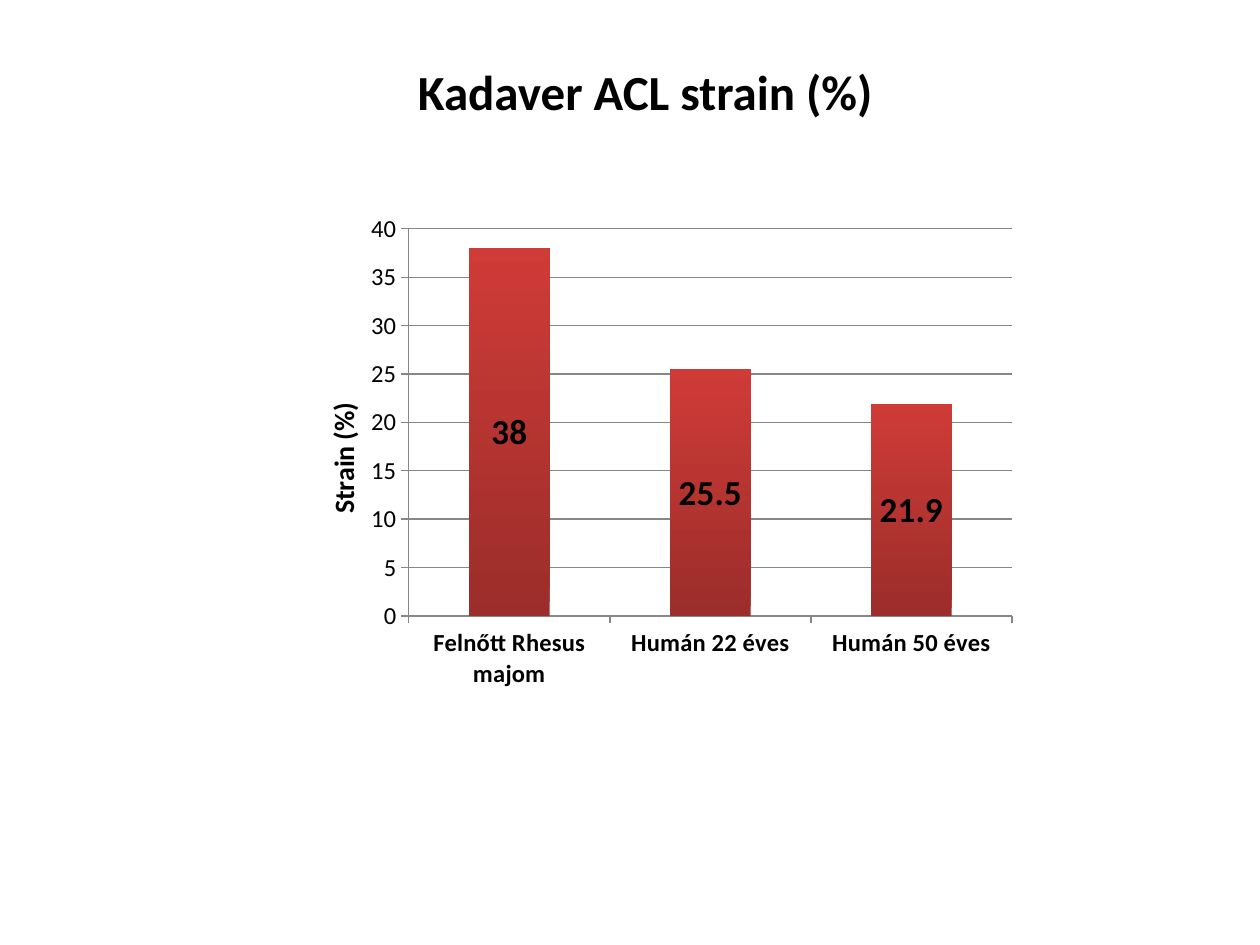
"""Build a slide with a column chart of cadaver ACL strain."""
from typing import NamedTuple

from lxml import etree
from pptx import Presentation
from pptx.chart.data import CategoryChartData
from pptx.dml.color import RGBColor
from pptx.enum import chart as ch, text
from pptx.oxml import ns
from pptx.util import Pt

BLACK = RGBColor(0, 0, 0)
GRAY = RGBColor(0x87, 0x87, 0x87)
DARK_RED = RGBColor(0x9B, 0x2D, 0x2A)
LIGHT_RED = RGBColor(0xCF, 0x3B, 0x37)
FONT = "Calibri"


class Strain(NamedTuple):
    subject: str
    percent: float


STRAINS = [
    Strain("Felnőtt Rhesus majom", 38),
    Strain("Humán 22 éves", 25.5),
    Strain("Humán 50 éves", 21.9),
]


def style(font, size: float, bold: bool = False) -> None:
    font.name, font.size, font.bold = FONT, Pt(size), bold
    font.color.rgb = BLACK


def draw_line(line) -> None:
    line.color.rgb = GRAY
    line.width = Pt(0.75)


def set_layout(parent, index: int, **settings) -> None:
    for old in parent.findall(ns.qn("c:layout")):
        parent.remove(old)
    layout = etree.Element(ns.qn("c:layout"))
    manual = etree.SubElement(layout, ns.qn("c:manualLayout"))
    for tag, value in settings.items():
        etree.SubElement(manual, ns.qn(f"c:{tag}")).set("val", str(value))
    parent.insert(index, layout)


def add_title(slide, wording: str) -> None:
    title = slide.shapes.title
    title.left, title.top, title.width, title.height = Pt(54), Pt(31.7), Pt(629.3), Pt(41)
    frame = title.text_frame
    frame.text = wording
    frame.auto_size = text.MSO_AUTO_SIZE.SHAPE_TO_FIT_TEXT
    frame.vertical_anchor = text.MSO_ANCHOR.TOP
    frame.paragraphs[0].alignment = text.PP_ALIGN.CENTER
    style(frame.paragraphs[0].runs[0].font, 28, True)


def add_strain_chart(slide, strains: list[Strain]) -> None:
    data = CategoryChartData()
    data.categories = [strain.subject for strain in strains]
    data.add_series("Series 1", [strain.percent for strain in strains])
    chart = slide.shapes.add_chart(
        ch.XL_CHART_TYPE.COLUMN_CLUSTERED, Pt(161.3), Pt(116.6), Pt(425.5), Pt(283.7), data
    ).chart
    chart.has_legend = chart.has_title = False
    style(chart.font, 10)

    subjects, percents = chart.category_axis, chart.value_axis
    for axis in (subjects, percents):
        axis.major_tick_mark = ch.XL_TICK_MARK.OUTSIDE
        axis.minor_tick_mark = ch.XL_TICK_MARK.NONE
        style(axis.tick_labels.font, 14, axis is subjects)
        draw_line(axis.format.line)
    percents.minimum_scale, percents.maximum_scale, percents.major_unit = 0, 40, 5
    percents.has_major_gridlines = True
    draw_line(percents.major_gridlines.format.line)
    heading = percents.axis_title
    heading.text_frame.text = "Strain (%)"
    style(heading.text_frame.paragraphs[0].runs[0].font, 16, True)

    plot = chart.plots[0]
    plot.gap_width, plot.vary_by_categories = 150, False
    bars = plot.series[0]
    fill = bars.format.fill
    fill.gradient()
    fill.gradient_angle = 90
    for stop, color in zip(fill.gradient_stops, (DARK_RED, LIGHT_RED)):
        stop.color.rgb = color
    labels = bars.data_labels
    labels.show_value = True
    labels.position = ch.XL_LABEL_POSITION.CENTER
    style(labels.font, 20, True)

    chart_area = chart.element.chart
    set_layout(chart_area.plotArea, 0, layoutTarget="inner", xMode="edge", yMode="edge",
               x=0.17, y=0.05, w=0.81, h=0.78)
    set_layout(percents.axis_title.element if hasattr(heading, "element") else heading._element,
               1, xMode="edge", yMode="edge", x=0.05, y=0.39)


def main() -> None:
    deck = Presentation()
    deck.slide_width, deck.slide_height = Pt(720), Pt(540)
    slide = deck.slides.add_slide(deck.slide_layouts[5])
    add_strain_chart(slide, STRAINS)
    add_title(slide, "Kadaver ACL strain (%)")
    deck.save("out.pptx")


if __name__ == "__main__":
    main()
